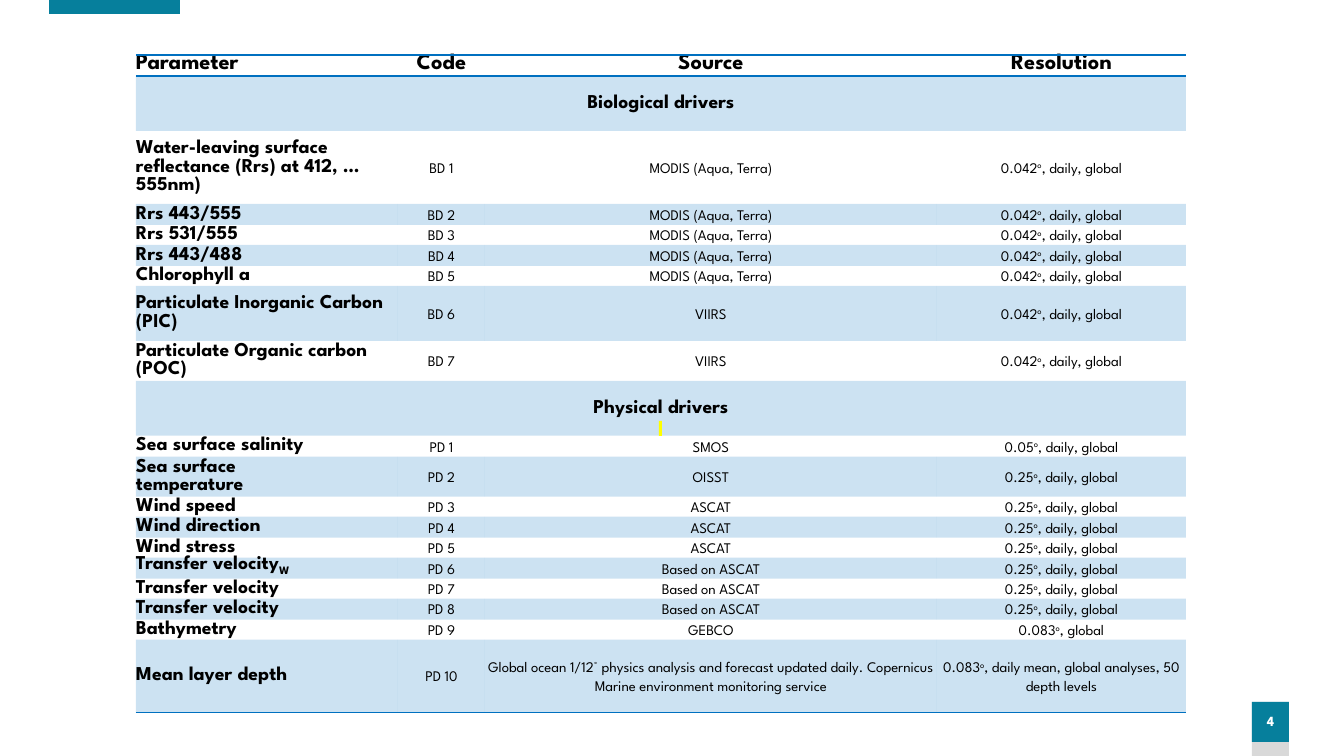
import itertools
import pptx
import pptx.dml.color
import pptx.enum.shapes
import pptx.enum.text
import pptx.oxml
import pptx.oxml.ns
import pptx.util
from lxml import etree

SCALE = 914400 / 100.8
FONT = "League Spartan"
TEAL, BLUE, BLACK, WHITE = "067F9C", "0070C0", "000000", "FFFFFF"
NO_STYLE = "{2D5ABB26-0587-4C30-8999-92F81FD0307C}"
LEFT = pptx.enum.text.PP_ALIGN.LEFT
CENTER = pptx.enum.text.PP_ALIGN.CENTER
MIDDLE = pptx.enum.text.MSO_ANCHOR.MIDDLE

COLUMNS = [262, 87, 452, 249]
ROW_TOPS = [55, 76, 131, 204, 225, 245, 266, 286, 341, 381, 436,
            457, 497, 517, 538, 558, 579, 599, 620, 640, 713]
HEADINGS = ["Parameter", "Code", "Source", "Resolution"]
DAILY = ", daily, global"
MODIS = "MODIS (Aqua, Terra)"
DERIVED = "Based on ASCAT"
COPERNICUS = ("Global ocean 1/12° physics analysis and forecast updated daily. "
              "Copernicus Marine environment monitoring service")
SECTIONS = [
    ("Biological drivers", "BD", [
        ("Water-leaving surface reflectance (Rrs) at 412, … 555nm)", MODIS, "0.042", DAILY),
        ("Rrs 443/555", MODIS, "0.042", DAILY),
        ("Rrs 531/555", MODIS, "0.042", DAILY),
        ("Rrs 443/488", MODIS, "0.042", DAILY),
        ("Chlorophyll a", MODIS, "0.042", DAILY),
        ("Particulate Inorganic Carbon (PIC)", "VIIRS", "0.042", DAILY),
        ("Particulate Organic carbon (POC)", "VIIRS", "0.042", DAILY),
    ]),
    ("Physical drivers", "PD", [
        ("Sea surface salinity", "SMOS", "0.05", DAILY),
        ("Sea surface\ntemperature", "OISST", "0.25", DAILY),
        ("Wind speed", "ASCAT", "0.25", DAILY),
        ("Wind direction", "ASCAT", "0.25", DAILY),
        ("Wind stress", "ASCAT", "0.25", DAILY),
        ("Transfer velocity_W", DERIVED, "0.25", DAILY),
        ("Transfer velocity", DERIVED, "0.25", DAILY),
        ("Transfer velocity", DERIVED, "0.25", DAILY),
        ("Bathymetry", "GEBCO", "0.083", ", global"),
        ("Mean layer depth", COPERNICUS, "0.083",
         ", daily mean, global analyses, 50 depth levels"),
    ]),
]


def px(n):
    return pptx.util.Emu(round(n * SCALE))


def rgb(color):
    return pptx.dml.color.RGBColor.from_string(color)


def add_run(p, text, size, bold, color=BLACK, baseline=0):
    r = p.add_run()
    r.text = text
    r.font.name = FONT
    r.font.size = pptx.util.Pt(size)
    r.font.bold = bold
    r.font.color.rgb = rgb(color)
    if baseline:
        r.font._element.set("baseline", str(baseline * 1000))


def add_rect(s, x, y, w, h, color):
    sp = s.shapes.add_shape(pptx.enum.shapes.MSO_SHAPE.RECTANGLE,
                            px(x), px(y), px(w), px(h))
    sp.shadow.inherit = False
    sp.fill.solid()
    sp.fill.fore_color.rgb = rgb(color)
    sp.line.fill.background()
    return sp


def add_page_number(s, number):
    add_rect(s, 1252, 702, 37, 54, "D9D9D9")
    tf = add_rect(s, 1252, 702, 37, 40, TEAL).text_frame
    tf.margin_left = tf.margin_right = 0
    tf.vertical_anchor = MIDDLE
    p = tf.paragraphs[0]
    p.alignment = CENTER
    p.line_spacing = 0.9
    add_run(p, number, 10, True, WHITE)


def write_cell(cell, paragraphs, size, bold, align=CENTER):
    cell.margin_left = cell.margin_right = cell.margin_top = cell.margin_bottom = 0
    cell.vertical_anchor = MIDDLE
    tf = cell.text_frame
    for i, runs in enumerate(paragraphs):
        p = tf.add_paragraph() if i else tf.paragraphs[0]
        p.alignment = align
        p.line_spacing = pptx.util.Pt(13)
        for text, baseline in runs:
            add_run(p, text, size, bold, baseline=baseline)


def name_runs(line):
    base, _, subscript = line.partition("_")
    return [(base, 0)] + ([(subscript, -25)] if subscript else [])


def tint_row(cells):
    for cell in cells:
        cell.fill.solid()
        cell.fill.fore_color.rgb = rgb(BLUE)
        color = cell._tc.tcPr.find(".//" + pptx.oxml.ns.qn("a:srgbClr"))
        etree.SubElement(color, pptx.oxml.ns.qn("a:alpha"), val="20000")


def rule_row(cells, sides):
    for cell in cells:
        for i, side in enumerate(sides):
            ln = pptx.oxml.parse_xml(
                f'<a:ln{side} {pptx.oxml.ns.nsdecls("a")} w="12700"><a:solidFill>'
                f'<a:srgbClr val="{BLUE}"/></a:solidFill></a:ln{side}>')
            cell._tc.get_or_add_tcPr().insert(i, ln)


def write_driver(cells, code, name, source, value, extent):
    write_cell(cells[0], [name_runs(line) for line in name.split("\n")], 14, True, LEFT)
    write_cell(cells[1], [[(code, 0)]], 10.5, False)
    write_cell(cells[2], [[(source, 0)]], 10.5, False)
    write_cell(cells[3], [[(value, 0), ("o", 30), (extent, 0)]], 10.5, False)


def add_driver_table(s):
    heights = [b - a for a, b in itertools.pairwise(ROW_TOPS)]
    frame = s.shapes.add_table(len(heights), len(COLUMNS), px(136), px(ROW_TOPS[0]),
                               px(sum(COLUMNS)), px(sum(heights)))
    table = frame.table
    table.first_row = table.horz_banding = False
    table._tbl.tblPr.find(pptx.oxml.ns.qn("a:tableStyleId")).text = NO_STYLE
    for column, width in zip(table.columns, COLUMNS):
        column.width = px(width)
    for row, height in zip(table.rows, heights):
        row.height = px(height)

    rows = [list(row.cells) for row in table.rows]
    for i, cells in enumerate(rows):
        if i % 2:
            tint_row(cells)
        else:
            for cell in cells:
                cell.fill.background()
    rule_row(rows[0], "TB")
    rule_row(rows[-1], "B")

    for i, (cell, heading) in enumerate(zip(rows[0], HEADINGS)):
        write_cell(cell, [[(heading, 0)]], 16, True, CENTER if i else LEFT)
    remaining = iter(rows[1:])
    for title, prefix, drivers in SECTIONS:
        cells = next(remaining)
        cells[0].merge(cells[-1])
        write_cell(cells[0], [[(title, 0)]], 14, True)
        for number, driver in enumerate(drivers, 1):
            write_driver(next(remaining), f"{prefix} {number}", *driver)


def main():
    prs = pptx.Presentation()
    prs.slide_width, prs.slide_height = px(1344), px(756)
    s = prs.slides.add_slide(prs.slide_layouts[6])
    add_page_number(s, "4")
    add_rect(s, 49, 0, 131, 14, TEAL)
    add_driver_table(s)
    add_rect(s, 659, 421, 3, 15, "FFFF00")
    prs.save("out.pptx")


if __name__ == "__main__":
    main()
